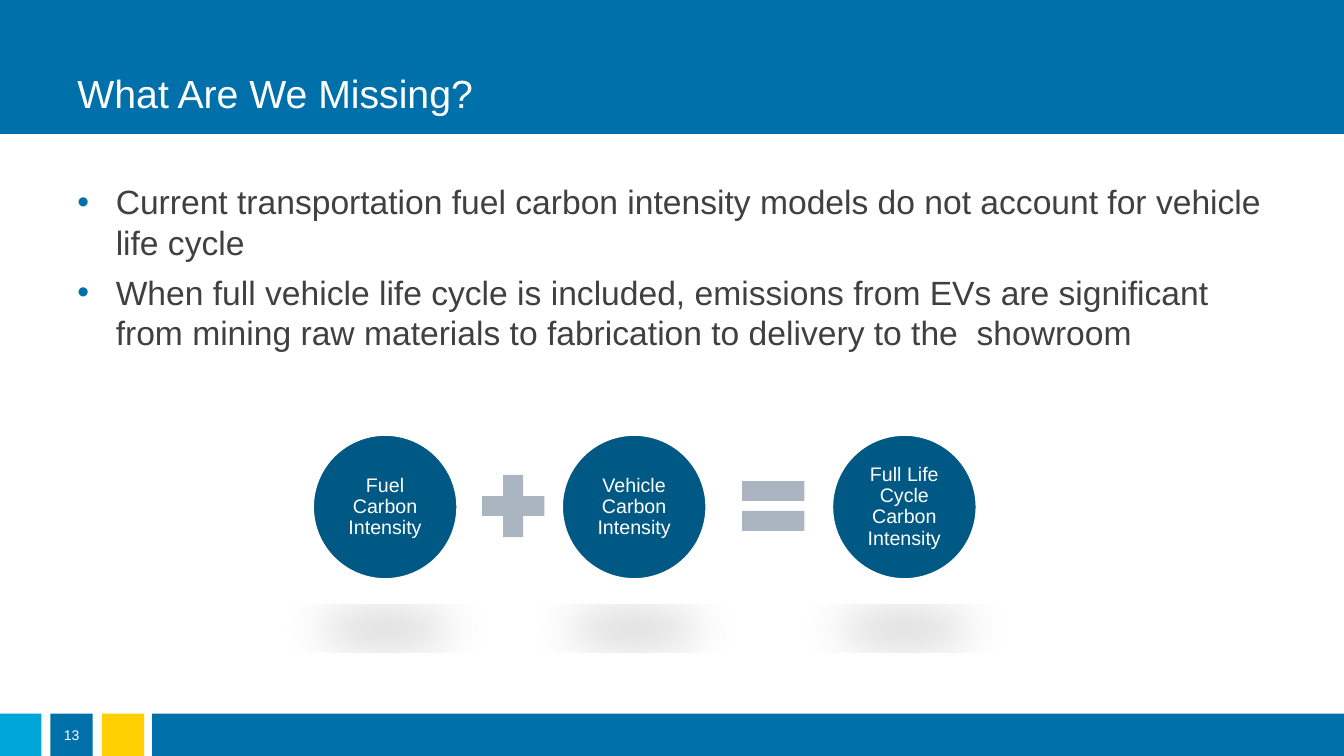
from dataclasses import dataclass

from lxml import etree
from pptx import Presentation
from pptx.dml.color import RGBColor
from pptx.enum import shapes, text
from pptx.oxml import parse_xml
from pptx.oxml.ns import qn
from pptx.util import Inches, Pt

KIND = shapes.MSO_SHAPE
DRAWING_NS = "http://schemas.openxmlformats.org/drawingml/2006/main"


@dataclass(frozen=True)
class Theme:
    font: str = "Arial"
    blue: str = "0070AB"
    cyan: str = "00A5D9"
    yellow: str = "FFCF01"
    navy: str = "005984"
    grey: str = "ABB5C2"
    ink: str = "404040"
    white: str = "FFFFFF"
    title_size: int = 28
    body_size: int = 24
    circle_size: int = 14
    number_size: int = 10


THEME = Theme()

BULLETS = [
    "Current transportation fuel carbon intensity models do not account for vehicle life cycle",
    "When full vehicle life cycle is included, emissions from EVs are significant "
    "from mining raw materials to fabrication to delivery to the  showroom",
]
CIRCLES = [
    (3.1, "Fuel Carbon Intensity"),
    (5.57, "Vehicle Carbon Intensity"),
    (8.25, "Full Life Cycle Carbon Intensity"),
]
OPERATORS = [(4.67, KIND.MATH_PLUS), (7.25, KIND.MATH_EQUAL)]


def set_font(para, size, color):
    para.font.name = THEME.font
    para.font.size = Pt(size)
    para.font.color.rgb = RGBColor.from_string(color)


def set_insets(frame, inset):
    frame.margin_left = frame.margin_right = Inches(inset)
    frame.margin_top = frame.margin_bottom = Inches(inset)


def add_filled(page, kind, left, top, width, height, color):
    shape = page.shapes.add_shape(
        kind, Inches(left), Inches(top), Inches(width), Inches(height))
    shape.shadow.inherit = False
    shape.fill.solid()
    shape.fill.fore_color.rgb = RGBColor.from_string(color)
    shape.line.fill.background()
    return shape


def add_centred_text(shape, words, size, inset):
    frame = shape.text_frame
    frame.word_wrap = True
    frame.vertical_anchor = text.MSO_ANCHOR.MIDDLE
    set_insets(frame, inset)
    para = frame.paragraphs[0]
    para.text = words
    para.alignment = text.PP_ALIGN.CENTER
    set_font(para, size, THEME.white)
    return para


def add_text_box(page, left, top, width, height):
    box = page.shapes.add_textbox(
        Inches(left), Inches(top), Inches(width), Inches(height))
    box.text_frame.word_wrap = True
    return box.text_frame


def add_bullet(para):
    props = para._p.get_or_add_pPr()
    props.set("marL", str(Inches(0.38)))
    props.set("indent", str(-Inches(0.38)))
    color = etree.SubElement(props, qn("a:buClr"))
    etree.SubElement(color, qn("a:srgbClr"), val=THEME.blue)
    etree.SubElement(props, qn("a:buFont"), typeface=THEME.font)
    etree.SubElement(props, qn("a:buChar"), char="•")


def add_floor_shadow(shape):
    """Cast a flattened, mirrored shadow below the shape."""
    effects = shape._element.spPr.find(qn("a:effectLst"))
    effects.append(parse_xml(
        f'<a:outerShdw xmlns:a="{DRAWING_NS}" blurRad="{Pt(35)}" dist="{Pt(25)}" '
        'dir="5400000" sx="90000" sy="-19000" rotWithShape="0">'
        '<a:srgbClr val="000000"><a:alpha val="22000"/></a:srgbClr></a:outerShdw>'))


def add_title(page):
    add_filled(page, KIND.RECTANGLE, 0, 0, 13.34, 1.33, THEME.blue)
    frame = add_text_box(page, 0.67, 0.27, 12, 0.93)
    frame.vertical_anchor = text.MSO_ANCHOR.BOTTOM
    para = frame.paragraphs[0]
    para.text = "What Are We Missing?"
    set_font(para, THEME.title_size, THEME.white)


def add_footer(page):
    top, side, step = 7.08, 0.42, 0.51
    add_filled(page, KIND.RECTANGLE, 1.51, top, 11.82, side, THEME.blue)
    tiles = [
        add_filled(page, KIND.RECTANGLE, -0.01 + i * step, top, side, side, color)
        for i, color in enumerate((THEME.cyan, THEME.blue, THEME.yellow))
    ]
    add_centred_text(tiles[1], "13", THEME.number_size, 0)


def add_body(page):
    frame = add_text_box(page, 0.67, 1.75, 12, 2.42)
    for i, words in enumerate(BULLETS):
        para = frame.add_paragraph() if i else frame.paragraphs[0]
        para.text = words
        para.space_before = Pt(3 if i else 0)
        para.space_after = Pt(4)
        add_bullet(para)
        set_font(para, THEME.body_size, THEME.ink)


def add_equation(page):
    for left, kind in OPERATORS:
        add_filled(page, kind, left, 4.6, 0.84, 0.84, THEME.grey)
    for left, words in CIRCLES:
        circle = add_filled(page, KIND.OVAL, left, 4.31, 1.44, 1.44, THEME.navy)
        circle.line.color.rgb = RGBColor.from_string(THEME.white)
        circle.line.width = Pt(2)
        add_floor_shadow(circle)
        para = add_centred_text(circle, words, THEME.circle_size, 0.03)
        para.line_spacing = 0.9


def main():
    deck = Presentation()
    deck.slide_width, deck.slide_height = Inches(13.33), Inches(7.5)
    page = deck.slides.add_slide(deck.slide_layouts[6])
    add_title(page)
    add_footer(page)
    add_body(page)
    add_equation(page)
    deck.save("out.pptx")


if __name__ == "__main__":
    main()
